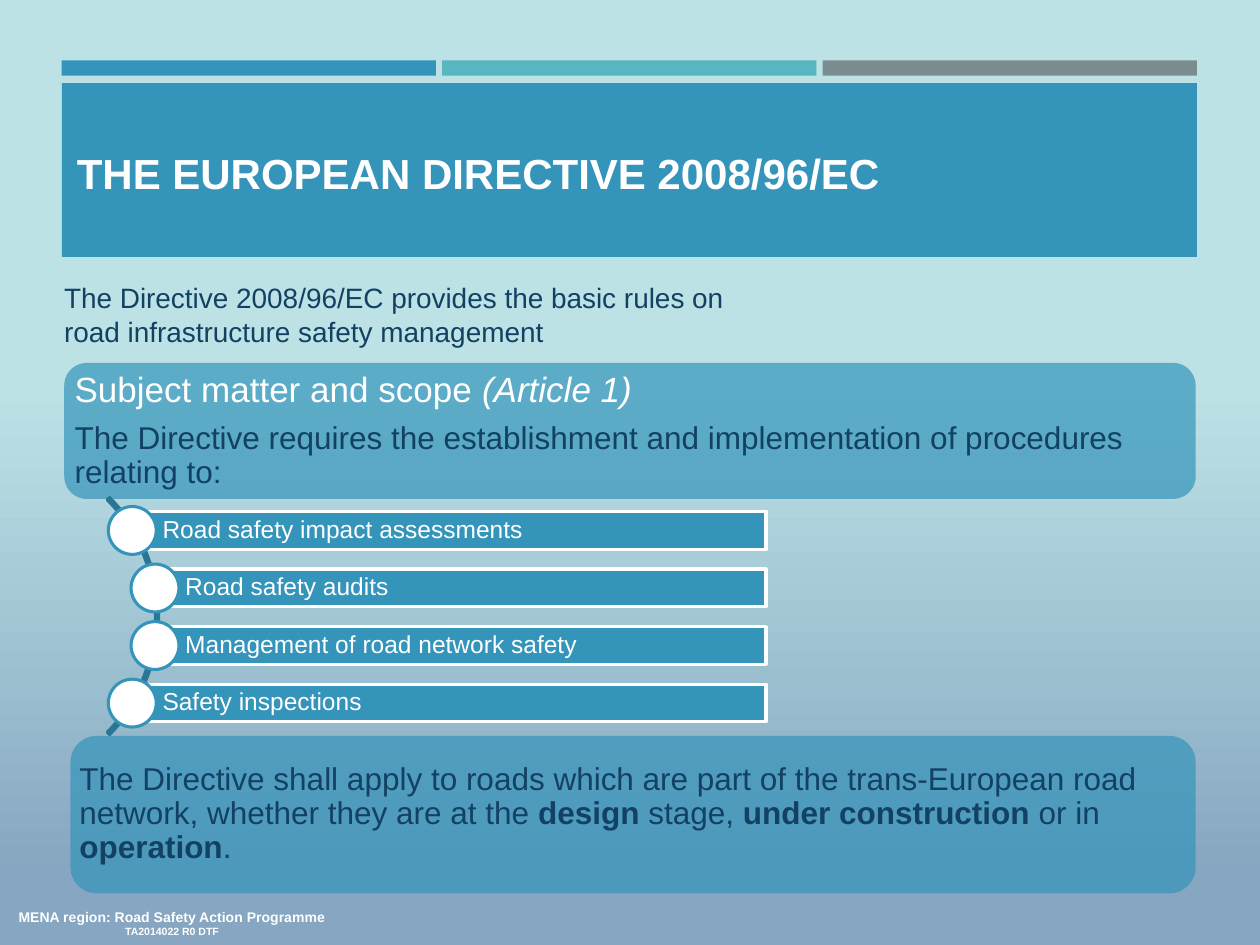
from lxml import etree
from pptx import Presentation
from pptx.dml.color import RGBColor
from pptx.enum.shapes import MSO_SHAPE
from pptx.enum.text import MSO_ANCHOR, PP_ALIGN
from pptx.oxml.ns import qn
from pptx.util import Inches, Pt

RECT = MSO_SHAPE.RECTANGLE
ROUNDED = MSO_SHAPE.ROUNDED_RECTANGLE
OVAL = MSO_SHAPE.OVAL
ARC = MSO_SHAPE.BLOCK_ARC
MIDDLE = MSO_ANCHOR.MIDDLE
TOP = MSO_ANCHOR.TOP
BOTTOM = MSO_ANCHOR.BOTTOM
LEFT = PP_ALIGN.LEFT
CENTER = PP_ALIGN.CENTER

FONT = "Arial"
BLUE = "3494BA"
TEAL = "58B6C0"
GRAY = "7A8C8E"
NAVY = "134163"
ARC_BLUE = "2A7795"
WHITE = "FFFFFF"
SKY_LOW = "86A6C1"
SKY_HIGH = "BCE2E6"
LINE_WIDTH = 1.75
STEPS = [
    "Road safety impact assessments",
    "Road safety audits",
    "Management of road network safety",
    "Safety inspections",
]


def rgb(value):
    return RGBColor.from_string(value)


class SlideBuilder:
    def __init__(self, prs):
        self.s = prs.slides.add_slide(prs.slide_layouts[5])

    def background(self, low, high):
        fill = self.s.background.fill
        fill.gradient()
        fill.gradient_angle = 90
        for stop, position, color in zip(fill.gradient_stops, (0.07, 0.59), (low, high)):
            stop.position = position
            stop.color.rgb = rgb(color)

    def shape(self, kind, x, y, w, h, fill=None, line=None, alpha=None):
        sp = self.s.shapes.add_shape(kind, Inches(x), Inches(y), Inches(w), Inches(h))
        sp.shadow.inherit = False
        if fill:
            sp.fill.solid()
            sp.fill.fore_color.rgb = rgb(fill)
        else:
            sp.fill.background()
        if line:
            sp.line.color.rgb = rgb(line)
            sp.line.width = Pt(LINE_WIDTH)
        else:
            sp.line.fill.background()
        if alpha:
            color = sp.element.spPr.find(qn("a:solidFill"))[0]
            etree.SubElement(color, qn("a:alpha"), val=str(alpha * 1000))
        return sp

    def frame(self, sp, anchor, insets=(0.1, 0.05, 0.1, 0.05)):
        tf = sp.text_frame
        tf.word_wrap = True
        tf.vertical_anchor = anchor
        tf.margin_left, tf.margin_top, tf.margin_right, tf.margin_bottom = map(Inches, insets)
        return tf

    def paragraph(self, tf, runs, size, color, bold=None, align=LEFT, spacing=None, after=0):
        p = tf.paragraphs[0] if not tf.text else tf.add_paragraph()
        p.alignment = align
        p.line_spacing = spacing
        p.space_after = Pt(after)
        p.font.name = FONT
        p.font.size = Pt(size)
        p.font.color.rgb = rgb(color)
        p.font.bold = bold
        for text, style in runs:
            r = p.add_run()
            r.text = text
            if style == "bold":
                r.font.bold = True
            elif style == "italic":
                r.font.italic = True
        return p

    def textbox(self, x, y, w, h):
        sp = self.s.shapes.add_textbox(Inches(x), Inches(y), Inches(w), Inches(h))
        return self.frame(sp, TOP)

    def title(self, text, x, y, w, h):
        sp = self.s.shapes.title
        sp.left, sp.top, sp.width, sp.height = map(Inches, (x, y, w, h))
        self.paragraph(self.frame(sp, BOTTOM), [(text, None)], 24, WHITE, bold=True)
        self.s.shapes.element.append(sp.element)

    def panel(self, x, y, w, h, inset):
        sp = self.shape(ROUNDED, x, y, w, h, BLUE, alpha=70)
        return self.frame(sp, MIDDLE, (inset,) * 4)

    def step(self, text, x, center_y, right):
        height, diameter = 0.3, 0.38
        bar = self.shape(RECT, x, center_y - height / 2, right - x, height, BLUE, WHITE)
        tf = self.frame(bar, MIDDLE, (0.24, 0.04, 0.04, 0.04))
        self.paragraph(tf, [(text, None)], 14, WHITE, spacing=0.9)
        radius = diameter / 2
        self.shape(OVAL, x - radius, center_y - radius, diameter, diameter, WHITE, BLUE)


def main():
    prs = Presentation()
    prs.slide_width, prs.slide_height = Inches(10), Inches(7.5)
    b = SlideBuilder(prs)
    b.background(SKY_LOW, SKY_HIGH)

    for i, color in enumerate((BLUE, TEAL, GRAY)):
        b.shape(RECT, 0.49 + i * 3.02, 0.48, 2.97, 0.12, color)
    b.shape(RECT, 0.49, 0.66, 9.01, 1.38, BLUE)
    b.title("THE EUROPEAN DIRECTIVE 2008/96/EC", 0.51, 0.75, 8.98, 0.87)

    tf = b.textbox(0.41, 2.18, 9.01, 0.64)
    for text in ("The Directive 2008/96/EC provides the basic rules on",
                 "road infrastructure safety management"):
        b.paragraph(tf, [(text, None)], 16, NAVY)

    tf = b.panel(0.51, 2.88, 8.98, 1.08, 0.03)
    b.paragraph(tf, [("Subject matter and scope ", None), ("(Article 1)", "italic")],
                20, WHITE, spacing=0.9, after=7)
    b.paragraph(tf, [("The Directive requires the establishment and implementation "
                      "of procedures relating to:", None)], 18, NAVY, spacing=0.9)

    tf = b.panel(0.56, 5.84, 8.93, 1.25, 0.01)
    b.paragraph(tf, [
        ("The Directive shall apply to roads which are part of the trans-European road "
         "network, whether they are at the ", None),
        ("design", "bold"),
        (" stage, ", None),
        ("under construction ", "bold"),
        ("or in ", None),
        ("operation", "bold"),
        (".", None),
    ], 18, NAVY, spacing=0.9)

    arc = b.shape(ARC, -1.4, 3.56, 2.66, 2.66, line=ARC_BLUE)
    for i, value in enumerate((189, 27, 0.01)):
        arc.adjustments[i] = value
    first, last = 4.21, 5.58
    gap = (last - first) / (len(STEPS) - 1)
    for i, text in enumerate(STEPS):
        x = 1.05 if i in (0, len(STEPS) - 1) else 1.23
        b.step(text, x, first + i * gap, 6.08)

    tf = b.textbox(0.02, 7.16, 2.69, 0.34)
    p = b.paragraph(tf, [("MENA region: Road Safety Action Programme", None)],
                    8, WHITE, bold=True, align=CENTER, after=3)
    p.space_before = Pt(3)
    p.add_line_break()
    r = p.add_run()
    r.text = "TA2014022 R0 DTF"
    r.font.size = Pt(6)

    prs.save("out.pptx")


if __name__ == "__main__":
    main()
